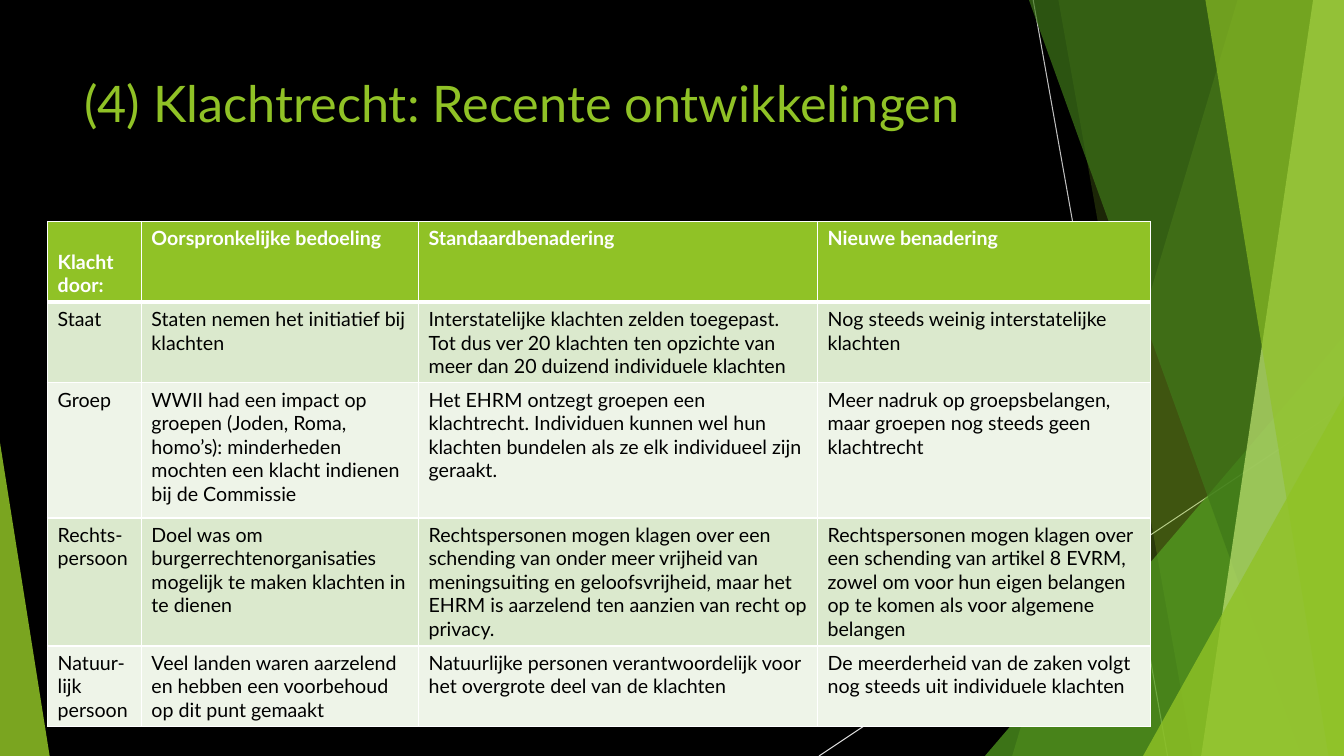
from lxml import etree
from pptx import Presentation
from pptx.dml.color import RGBColor
from pptx.enum.shapes import MSO_CONNECTOR, MSO_SHAPE
from pptx.enum.text import MSO_ANCHOR
from pptx.oxml.ns import qn
from pptx.util import Pt

STRAIGHT = MSO_CONNECTOR.STRAIGHT
TRIANGLE = MSO_SHAPE.ISOSCELES_TRIANGLE
TOP = MSO_ANCHOR.TOP

BLACK = RGBColor(0x00, 0x00, 0x00)
WHITE = RGBColor(0xFF, 0xFF, 0xFF)
GREEN = RGBColor(0x90, 0xC2, 0x26)
MID_GREEN = RGBColor(0x54, 0xA0, 0x21)
DARK_GREEN = RGBColor(0x3F, 0x78, 0x19)
PALE_GREEN = RGBColor(0xC0, 0xE4, 0x74)
BAND_DARK = RGBColor(0xDB, 0xE9, 0xCD)
BAND_LIGHT = RGBColor(0xEE, 0xF4, 0xE8)
GREY = RGBColor(0xBF, 0xBF, 0xBF)
LIGHT_GREY = RGBColor(0xD9, 0xD9, 0xD9)

WIDTH, HEIGHT = 960, 540
COLUMN_WIDTHS = [67, 198, 285, 237.6]
ROW_HEIGHTS = [57.6, 57.6, 96.5, 91.5, 57.6]
COMPLAINTS = [
    ["Klacht door:", "Oorspronkelijke bedoeling", "Standaardbenadering", "Nieuwe benadering"],
    ["Staat",
     "Staten nemen het initiatief bij klachten",
     "Interstatelijke klachten zelden toegepast. Tot dus ver 20 klachten ten opzichte van "
     "meer dan 20 duizend individuele klachten",
     "Nog steeds weinig interstatelijke klachten"],
    ["Groep",
     "WWII had een impact op groepen (Joden, Roma, homo’s): minderheden mochten een klacht "
     "indienen bij de Commissie",
     "Het EHRM ontzegt groepen een klachtrecht. Individuen kunnen wel hun klachten bundelen "
     "als ze elk individueel zijn geraakt.",
     "Meer nadruk op groepsbelangen, maar groepen nog steeds geen klachtrecht"],
    ["Rechts-persoon",
     "Doel was om burgerrechtenorganisaties mogelijk te maken klachten in te dienen",
     "Rechtspersonen mogen klagen over een schending van onder meer vrijheid van "
     "meningsuiting en geloofsvrijheid, maar het EHRM is aarzelend ten aanzien van recht op "
     "privacy.",
     "Rechtspersonen mogen klagen over een schending van artikel 8 EVRM, zowel om voor hun "
     "eigen belangen op te komen als voor algemene belangen"],
    ["Natuur-lijk persoon",
     "Veel landen waren aarzelend en hebben een voorbehoud op dit punt gemaakt",
     "Natuurlijke personen verantwoordelijk voor het overgrote deel van de klachten",
     "De meerderheid van de zaken volgt nog steeds uit individuele klachten"],
]


class SlideBuilder:
    font = "Lato"
    title_size = 36
    table_size = 14

    def __init__(self, slide):
        self.slide = slide
        self.shapes = slide.shapes

    def background(self, color):
        fill = self.slide.background.fill
        fill.solid()
        fill.fore_color.rgb = color

    def line(self, start, end, color):
        line = self.shapes.add_connector(STRAIGHT, *map(Pt, start + end))
        line.line.color.rgb = color
        line.line.width = Pt(0.75)
        etree.SubElement(line._element.spPr, qn("a:effectLst"))

    def paint(self, shape, color, opacity):
        """Give a shape a borderless fill; opacity is in percent."""
        shape.shadow.inherit = False
        shape.line.fill.background()
        shape.fill.solid()
        shape.fill.fore_color.rgb = color
        srgb = shape._element.spPr.find(".//" + qn("a:srgbClr"))
        etree.SubElement(srgb, qn("a:alpha"), val=str(opacity * 1000))

    def shard(self, top_left, bottom_left, color, opacity):
        """Draw a full-height facet that reaches the right edge of the slide."""
        outline = self.shapes.build_freeform(Pt(top_left), 0)
        corners = [(WIDTH, 0), (WIDTH, HEIGHT), (bottom_left, HEIGHT)]
        outline.add_line_segments([(Pt(x), Pt(y)) for x, y in corners])
        self.paint(outline.convert_to_shape(), color, opacity)

    def triangle(self, left, top, width, apex, color, opacity):
        """Draw a triangle down to the bottom edge; apex runs from 0 (left) to 1 (right)."""
        shape = self.shapes.add_shape(TRIANGLE, Pt(left), Pt(top), Pt(width), Pt(HEIGHT - top))
        shape.adjustments[0] = apex
        self.paint(shape, color, opacity)

    def add_text(self, frame, text, size, color, bold=False):
        frame.word_wrap = True
        run = frame.paragraphs[0].add_run()
        run.text = text
        run.font.name = self.font
        run.font.size = Pt(size)
        run.font.color.rgb = color
        run.font.bold = bold

    def title(self, text, left, top, width, height):
        box = self.shapes.add_textbox(Pt(left), Pt(top), Pt(width), Pt(height))
        box.text_frame.vertical_anchor = TOP
        self.add_text(box.text_frame, text, self.title_size, GREEN)

    def cell_borders(self, cell, bottom_width):
        properties = cell._tc.get_or_add_tcPr()
        widths = [("L", 1), ("R", 1), ("T", 1), ("B", bottom_width)]
        for position, (side, width) in enumerate(widths):
            border = etree.Element(qn("a:ln" + side), w=str(Pt(width)))
            fill = etree.SubElement(border, qn("a:solidFill"))
            etree.SubElement(fill, qn("a:srgbClr"), val=str(WHITE))
            properties.insert(position, border)

    def table(self, rows, left, top, widths, heights):
        frame = self.shapes.add_table(len(rows), len(widths), Pt(left), Pt(top),
                                      Pt(sum(widths)), Pt(sum(heights)))
        table = frame.table
        table.horz_banding = False
        for column, width in zip(table.columns, widths):
            column.width = Pt(width)
        for row, height in zip(table.rows, heights):
            row.height = Pt(height)
        for r, texts in enumerate(rows):
            header = r == 0
            band = GREEN if header else BAND_DARK if r % 2 else BAND_LIGHT
            for c, text in enumerate(texts):
                cell = table.cell(r, c)
                cell.fill.solid()
                cell.fill.fore_color.rgb = band
                self.cell_borders(cell, 3 if header else 1)
                self.add_text(cell.text_frame, text, self.table_size,
                              WHITE if header else BLACK, header)
        # The corner label starts one line lower than the other headings.
        table.cell(0, 0).margin_top = Pt(20.2)


def main():
    presentation = Presentation()
    presentation.slide_width = Pt(WIDTH)
    presentation.slide_height = Pt(HEIGHT)
    builder = SlideBuilder(presentation.slides.add_slide(presentation.slide_layouts[6]))

    builder.background(BLACK)
    builder.line((738, 0), (834, HEIGHT), GREY)
    builder.line((WIDTH, 290), (585, HEIGHT), LIGHT_GREY)
    builder.shard(884, 723, GREEN, 30)
    builder.shard(756, 852, GREEN, 20)
    builder.triangle(703.5, 240, 256.5, 1, MID_GREEN, 72)
    builder.shard(735, 929.5, DARK_GREEN, 70)
    builder.shard(938, 858, PALE_GREEN, 70)
    builder.shard(861, 949, GREEN, 65)
    builder.triangle(816.5, 283, 143.5, 1, GREEN, 80)
    builder.triangle(0, 316, 35.5, 0, GREEN, 85)

    builder.title("(4) Klachtrecht: Recente ontwikkelingen", 53, 48, 677, 104)
    builder.table(COMPLAINTS, 34, 158.2, COLUMN_WIDTHS, ROW_HEIGHTS)
    presentation.save("out.pptx")


if __name__ == "__main__":
    main()
